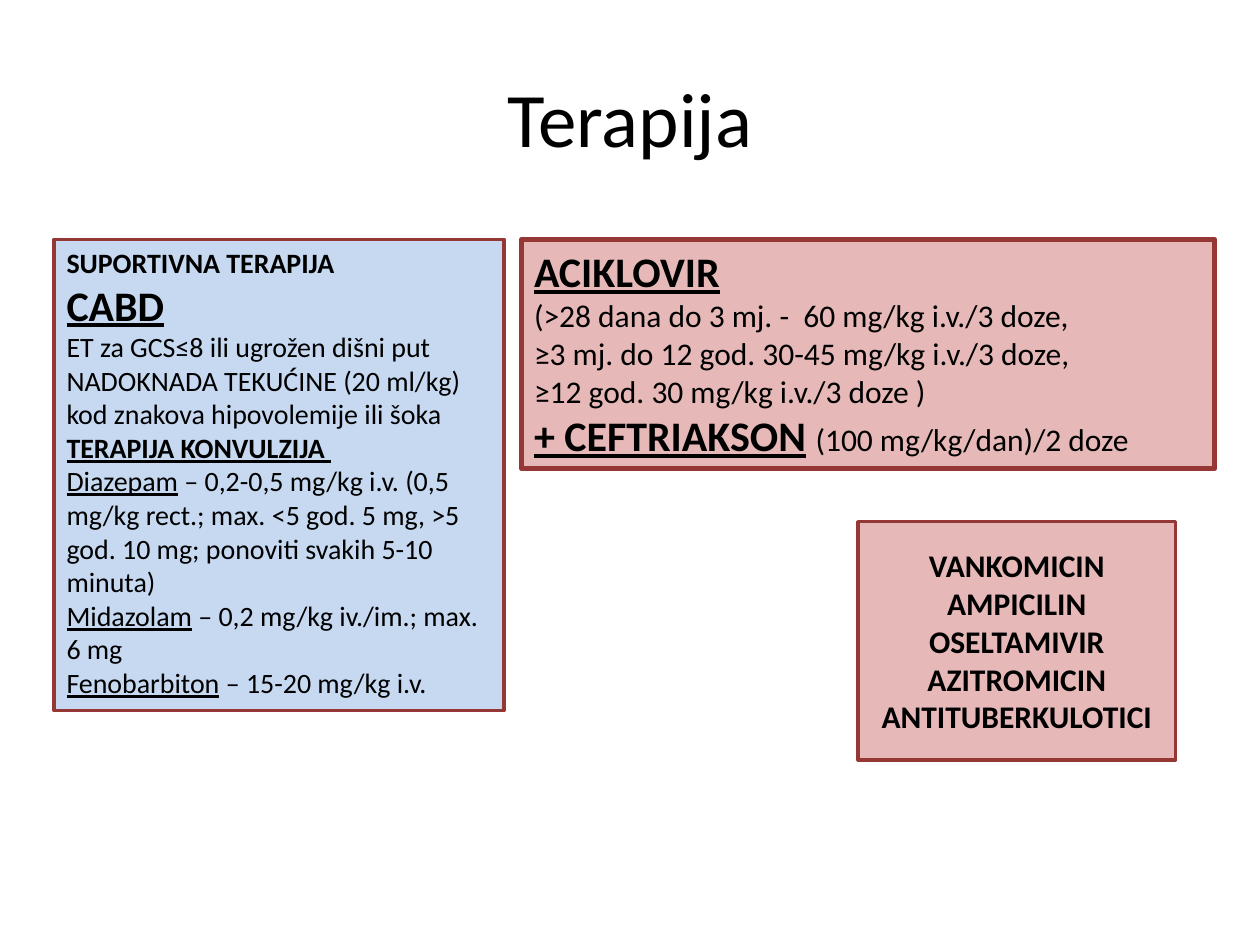
from dataclasses import dataclass

from pptx import Presentation
from pptx.dml.color import RGBColor
from pptx.enum.shapes import MSO_SHAPE
from pptx.enum.text import MSO_ANCHOR, MSO_AUTO_SIZE, PP_ALIGN
from pptx.util import Inches, Pt

RECT = MSO_SHAPE.RECTANGLE
TOP, MIDDLE = MSO_ANCHOR.TOP, MSO_ANCHOR.MIDDLE
LEFT, CENTER = PP_ALIGN.LEFT, PP_ALIGN.CENTER
FIT_SHAPE, FIXED = MSO_AUTO_SIZE.SHAPE_TO_FIT_TEXT, MSO_AUTO_SIZE.NONE


@dataclass(frozen=True)
class Theme:
    font: str = "Calibri"
    text: RGBColor = RGBColor(0x00, 0x00, 0x00)
    border: RGBColor = RGBColor(0x95, 0x37, 0x35)
    pink: RGBColor = RGBColor(0xE6, 0xB9, 0xB8)
    blue: RGBColor = RGBColor(0xC6, 0xD9, 0xF1)
    title: int = 44
    heading: int = 24
    body: int = 18
    small: int = 16


THEME = Theme()


@dataclass(frozen=True)
class Run:
    text: str
    size: int
    bold: bool = False
    underline: bool = False


@dataclass(frozen=True)
class Box:
    left: float
    top: float
    width: float
    height: float
    fill: RGBColor
    line_width: float
    paragraphs: list[list[Run]]
    align: PP_ALIGN = LEFT
    anchor: MSO_ANCHOR = TOP
    auto_size: MSO_AUTO_SIZE = FIT_SHAPE


def heading(text: str) -> Run:
    return Run(text, THEME.heading, bold=True, underline=True)


def drug(name: str, dose: str) -> list[Run]:
    return [Run(name, THEME.small, underline=True), Run(f" – {dose}", THEME.small)]


ANTIMICROBIALS = Box(
    4.14, 1.9, 5.5, 1.82, THEME.pink, 3,
    [
        [heading("ACIKLOVIR")],
        [Run("(>28 dana do 3 mj. -  60 mg/kg i.v./3 doze,", THEME.body)],
        [Run("≥3 mj. do 12 god. 30-45 mg/kg i.v./3 doze,", THEME.body)],
        [Run("≥12 god. 30 mg/kg i.v./3 doze )", THEME.body)],
        [
            heading("+ CEFTRIAKSON"),
            Run(" ", THEME.heading, bold=True),
            Run("(100 mg/kg/dan)/2 doze", THEME.body),
        ],
    ],
)

ADDITIONAL_DRUGS = Box(
    6.81, 4.14, 2.52, 1.89, THEME.pink, 2,
    [
        [Run(name, THEME.body, bold=True)]
        for name in ("VANKOMICIN", "AMPICILIN", "OSELTAMIVIR",
                     "AZITROMICIN", "ANTITUBERKULOTICI")
    ],
    CENTER, MIDDLE, FIXED,
)

SUPPORTIVE_THERAPY = Box(
    0.43, 1.9, 3.57, 3.74, THEME.blue, 2,
    [
        [Run("SUPORTIVNA TERAPIJA", THEME.small, bold=True)],
        [heading("CABD")],
        [Run("ET za GCS≤8 ili ugrožen dišni put", THEME.small)],
        [Run("NADOKNADA TEKUĆINE (20 ml/kg) kod znakova hipovolemije ili šoka",
             THEME.small)],
        [Run("TERAPIJA KONVULZIJA ", THEME.small, bold=True, underline=True)],
        drug("Diazepam", "0,2-0,5 mg/kg i.v. (0,5 mg/kg rect.; max. <5 god. 5 mg, "
                         ">5 god. 10 mg; ponoviti svakih 5-10 minuta)"),
        drug("Midazolam", "0,2 mg/kg iv./im.; max. 6 mg"),
        drug("Fenobarbiton", "15-20 mg/kg i.v."),
    ],
)


def add_title(s, text: str) -> None:
    title = s.shapes.title
    title.left, title.top = Inches(0.5), Inches(0.3)
    title.width, title.height = Inches(9), Inches(1.25)
    tf = title.text_frame
    tf.text = text
    tf.vertical_anchor = MIDDLE
    p = tf.paragraphs[0]
    p.alignment = CENTER
    p.font.name = THEME.font
    p.font.size = Pt(THEME.title)
    p.font.color.rgb = THEME.text


def add_box(s, box: Box) -> None:
    sp = s.shapes.add_shape(RECT, Inches(box.left), Inches(box.top),
                            Inches(box.width), Inches(box.height))
    sp.shadow.inherit = False
    sp.fill.solid()
    sp.fill.fore_color.rgb = box.fill
    sp.line.color.rgb = THEME.border
    sp.line.width = Pt(box.line_width)
    tf = sp.text_frame
    tf.word_wrap = True
    tf.auto_size = box.auto_size
    tf.vertical_anchor = box.anchor
    for i, runs in enumerate(box.paragraphs):
        p = tf.paragraphs[0] if i == 0 else tf.add_paragraph()
        p.alignment = box.align
        p.font.name = THEME.font
        p.font.color.rgb = THEME.text
        for run in runs:
            r = p.add_run()
            r.text = run.text
            r.font.name = THEME.font
            r.font.color.rgb = THEME.text
            r.font.size = Pt(run.size)
            r.font.bold = run.bold
            r.font.underline = run.underline


def main() -> None:
    prs = Presentation()
    prs.slide_width, prs.slide_height = Inches(10), Inches(7.5)
    title_only = prs.slide_layouts[5]
    s = prs.slides.add_slide(title_only)
    add_title(s, "Terapija")
    for box in (ANTIMICROBIALS, ADDITIONAL_DRUGS, SUPPORTIVE_THERAPY):
        add_box(s, box)
    prs.save("out.pptx")


if __name__ == "__main__":
    main()
